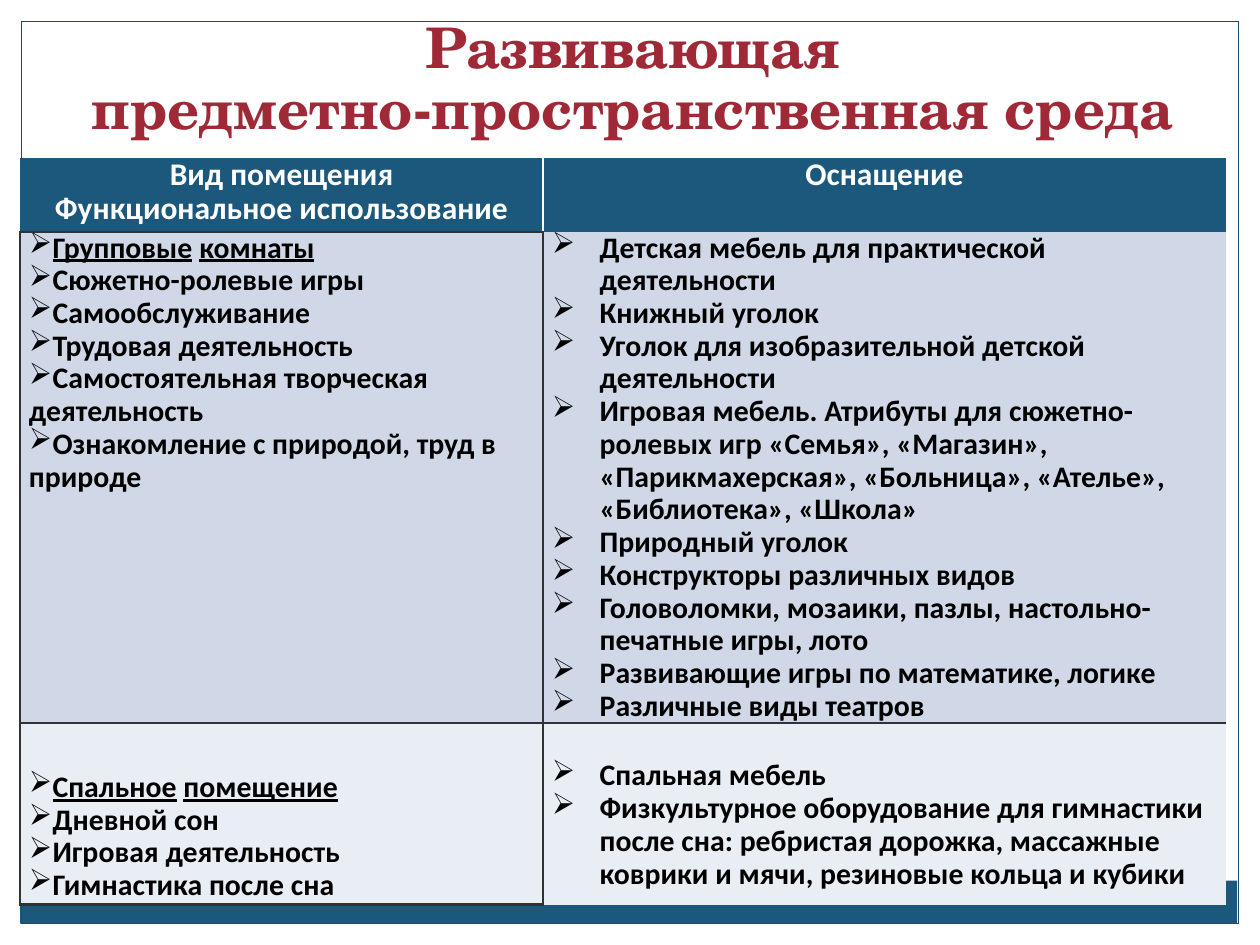
from dataclasses import dataclass
from typing import Optional

from lxml.etree import SubElement
from pptx import Presentation
from pptx.dml.color import RGBColor
from pptx.enum.shapes import MSO_SHAPE as Shape
from pptx.enum.text import MSO_ANCHOR as Anchor, PP_ALIGN as Align
from pptx.oxml import parse_xml
from pptx.oxml.ns import nsdecls, qn
from pptx.util import Inches, Pt

COLORS = {
    "white": "FFFFFF", "blue": "1B587C", "frame": "184E6D", "title": "9F2936",
    "border": "323232", "black": "000000", "band": "D0D8E8", "pale": "E9EDF4",
}
PLAIN_TABLE_STYLE = "{2D5ABB26-0587-4C30-8999-92F81FD0307C}"
HANGING = 0.38


@dataclass
class Box:
    left: float
    top: float
    width: float
    height: float
    fill: Optional[str] = None
    line: Optional[str] = None


@dataclass
class CellPlan:
    lines: list[str]
    fill: str
    borders: dict[str, str]  # side letter -> colour name
    header: bool = False
    underlined_first: bool = False
    hanging: float = 0
    top_margin: float = 0


BOXES = [
    Box(0, 0, 10, 0.17, "white"),
    Box(9.83, 0, 0.17, 7.5, "white"),
    Box(0, 0, 0.17, 7.5, "white"),
    Box(0.16, 6.99, 9.66, 0.34, "blue"),
    Box(0.17, 0.17, 9.66, 7.16, line="frame"),
]
TITLE_LINES = ["Развивающая", "предметно-пространственная среда"]
COLUMN_WIDTHS = [4.15, 5.42]
ROW_HEIGHTS = [0.59, 3.9, 1.44]
DARK_SIDES = dict.fromkeys("LRTB", "border")
ROWS = [
    [
        CellPlan(["Вид помещения", "Функциональное использование"], "blue",
                 {"R": "white", "B": "border"}, header=True),
        CellPlan(["Оснащение"], "blue", {"L": "white"}, header=True),
    ],
    [
        CellPlan([
            "Групповые комнаты",
            "Сюжетно-ролевые игры",
            "Самообслуживание",
            "Трудовая деятельность",
            "Самостоятельная творческая деятельность",
            "Ознакомление с природой, труд в природе",
        ], "band", DARK_SIDES, underlined_first=True),
        CellPlan([
            "Детская мебель для практической деятельности",
            "Книжный уголок",
            "Уголок для изобразительной детской деятельности",
            "Игровая мебель. Атрибуты для сюжетно-ролевых игр «Семья», «Магазин», "
            "«Парикмахерская», «Больница», «Ателье», «Библиотека», «Школа»",
            "Природный уголок",
            "Конструкторы различных видов",
            "Головоломки, мозаики, пазлы, настольно-печатные игры, лото",
            "Развивающие игры по математике, логике",
            "Различные виды театров",
        ], "band", {"L": "border", "B": "border"}, hanging=HANGING),
    ],
    [
        CellPlan([
            "Спальное помещение",
            "Дневной сон",
            "Игровая деятельность",
            "Гимнастика после сна",
        ], "pale", DARK_SIDES, underlined_first=True, top_margin=0.38),
        CellPlan([
            "Спальная мебель",
            "Физкультурное оборудование для гимнастики после сна: ребристая дорожка, "
            "массажные коврики и мячи, резиновые кольца и кубики",
        ], "pale", {"L": "border", "T": "border"}, hanging=HANGING, top_margin=0.29),
    ],
]


def color(name: str) -> RGBColor:
    return RGBColor.from_string(COLORS[name])


def add_run(paragraph, text: str, size: float, font_name: str, color_name: str,
            underline: bool = False) -> None:
    run = paragraph.add_run()
    run.text = text
    font = run.font
    font.name, font.size, font.bold = font_name, Pt(size), True
    font.color.rgb = color(color_name)
    if underline:
        font.underline = True


def add_box(slide, box: Box) -> None:
    shape = slide.shapes.add_shape(Shape.RECTANGLE, Inches(box.left), Inches(box.top),
                                   Inches(box.width), Inches(box.height))
    shape.shadow.inherit = False
    if box.fill:
        shape.fill.solid()
        shape.fill.fore_color.rgb = color(box.fill)
    else:
        shape.fill.background()
    if box.line:
        shape.line.color.rgb = color(box.line)
        shape.line.width = Pt(0.75)
    else:
        shape.line.fill.background()


def add_title(slide) -> None:
    frame = slide.shapes.add_textbox(Inches(0.2), Inches(0.13),
                                     Inches(9.8), Inches(1.04)).text_frame
    frame.word_wrap = True
    frame.vertical_anchor = Anchor.BOTTOM
    frame.margin_right = Inches(0.25)
    paragraph = frame.paragraphs[0]
    paragraph.alignment = Align.CENTER
    paragraph.line_spacing = 0.9
    for index, line in enumerate(TITLE_LINES):
        if index:
            paragraph.add_line_break()
        add_run(paragraph, line, 32, "TeX Gyre Schola", "title")


def set_borders(cell, borders: dict[str, str]) -> None:
    properties = cell._tc.get_or_add_tcPr()
    for index, side in enumerate(s for s in "LRTB" if s in borders):
        properties.insert(index, parse_xml(
            f'<a:ln{side} {nsdecls("a")} w="{Pt(1.5)}"><a:solidFill>'
            f'<a:srgbClr val="{COLORS[borders[side]]}"/></a:solidFill></a:ln{side}>'))


def set_bullet(paragraph, hanging: float) -> None:
    properties = paragraph._p.get_or_add_pPr()
    properties.set("marL", str(Inches(hanging)))
    properties.set("indent", str(-Inches(hanging)))
    SubElement(properties, qn("a:buChar")).set("char", "➢")


def fill_cell(cell, plan: CellPlan) -> None:
    cell.margin_left = cell.margin_right = Inches(0.07)
    cell.margin_top, cell.margin_bottom = Inches(plan.top_margin), 0
    set_borders(cell, plan.borders)
    cell.fill.solid()
    cell.fill.fore_color.rgb = color(plan.fill)
    frame = cell.text_frame
    for index, line in enumerate(plan.lines):
        paragraph = frame.add_paragraph() if index else frame.paragraphs[0]
        paragraph.line_spacing = 0.9
        if plan.header:
            paragraph.alignment = Align.CENTER
            add_run(paragraph, line, 18, "Calibri", "white")
            continue
        set_bullet(paragraph, plan.hanging)
        if plan.underlined_first and index == 0:
            # Words are underlined, the space between them is not
            first, space, second = line.partition(" ")
            for part in (first, space, second):
                add_run(paragraph, part, 17, "Calibri", "black", part != " ")
        else:
            add_run(paragraph, line, 17, "Calibri", "black")


def add_rooms_table(slide) -> None:
    graphic = slide.shapes.add_table(len(ROWS), len(COLUMN_WIDTHS), Inches(0.16), Inches(1.25),
                                     Inches(sum(COLUMN_WIDTHS)), Inches(sum(ROW_HEIGHTS)))
    table = graphic.table
    table._tbl.tblPr.find(qn("a:tableStyleId")).text = PLAIN_TABLE_STYLE
    table.horz_banding = False
    for column, width in zip(table.columns, COLUMN_WIDTHS):
        column.width = Inches(width)
    for row, height, plans in zip(table.rows, ROW_HEIGHTS, ROWS):
        row.height = Inches(height)
        for cell, plan in zip(row.cells, plans):
            fill_cell(cell, plan)


def main() -> None:
    presentation = Presentation()
    presentation.slide_width, presentation.slide_height = Inches(10), Inches(7.5)
    slide = presentation.slides.add_slide(presentation.slide_layouts[6])
    # Margin strips, bottom band and frame
    for box in BOXES:
        add_box(slide, box)
    add_title(slide)
    add_rooms_table(slide)
    presentation.save("out.pptx")


if __name__ == "__main__":
    main()
